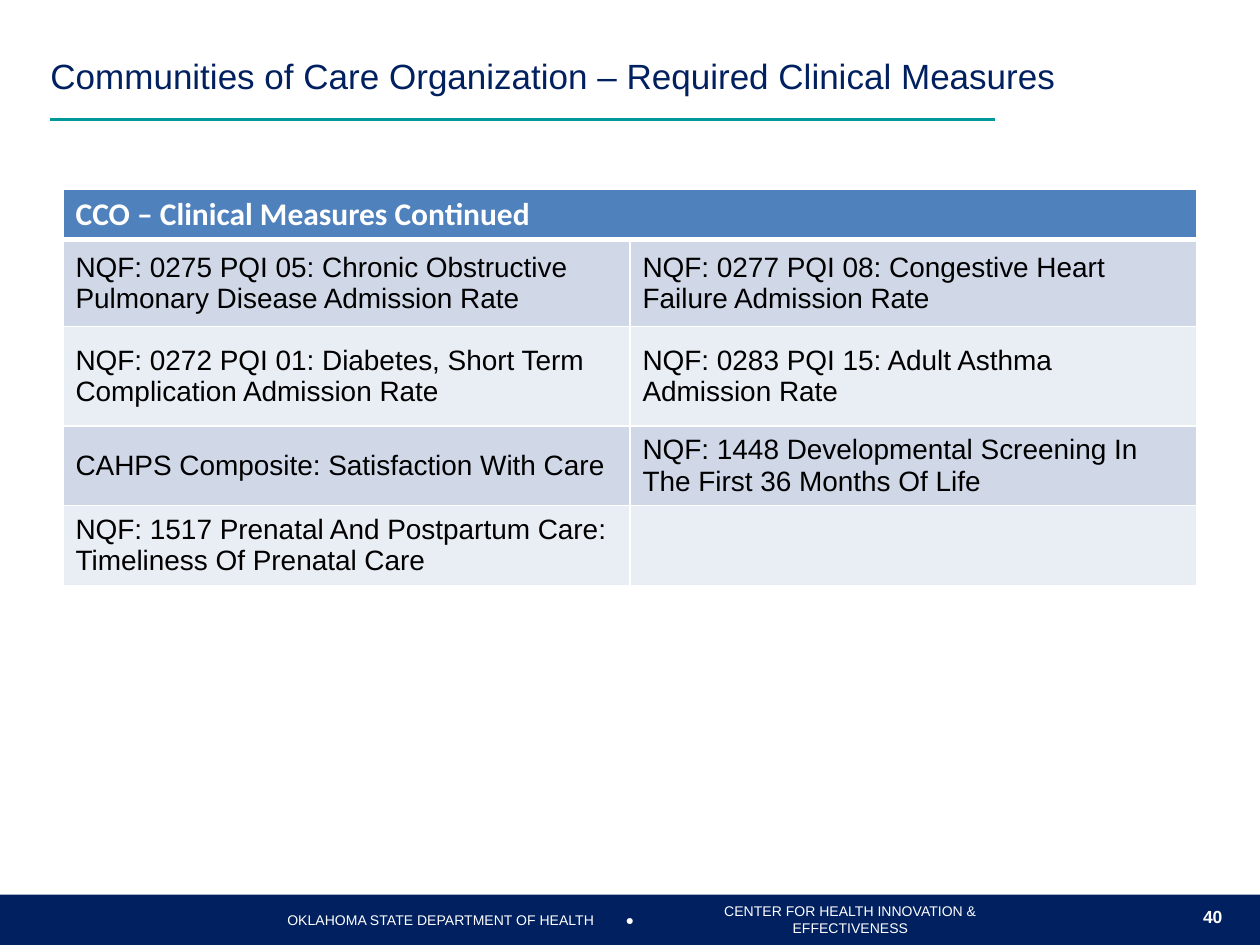
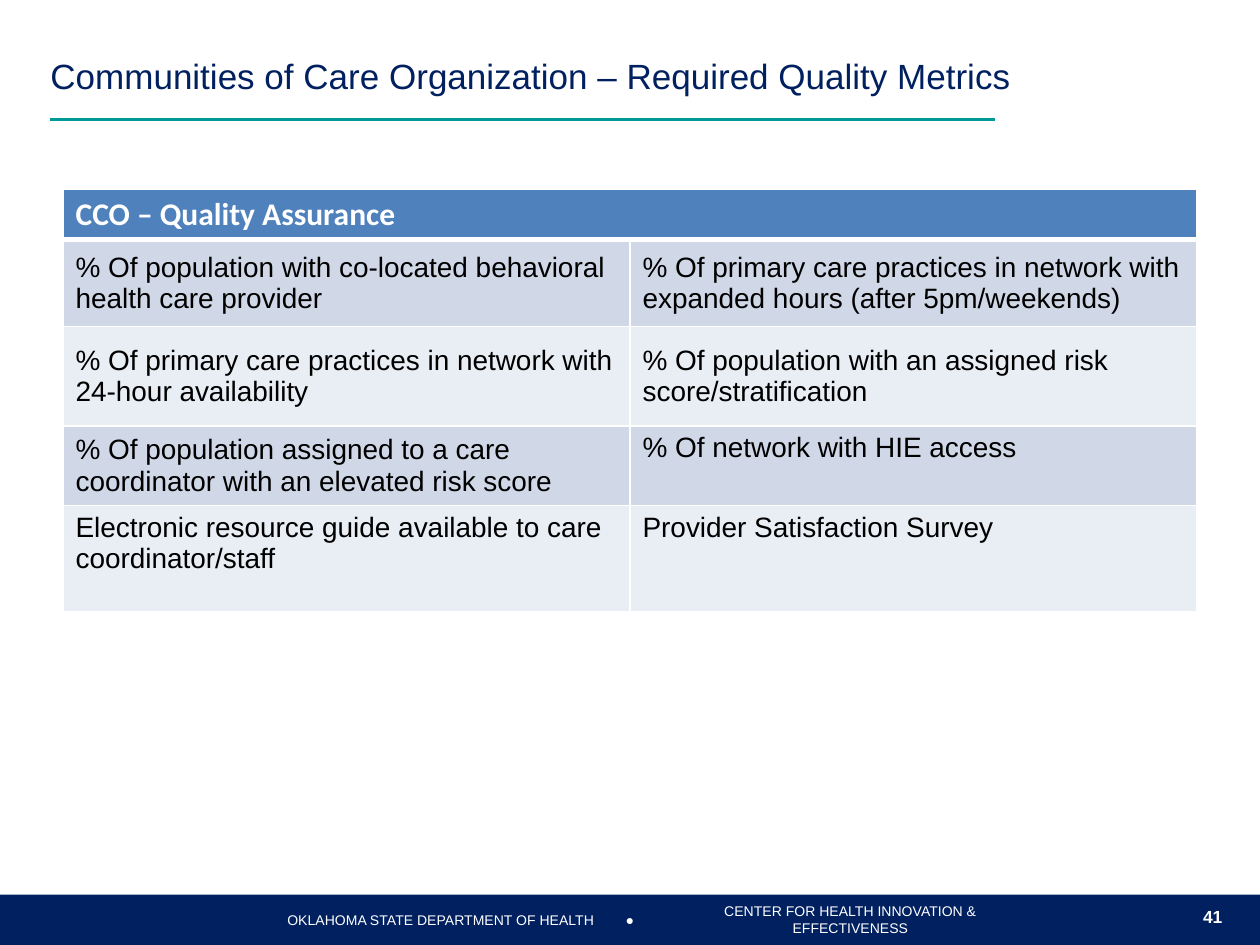
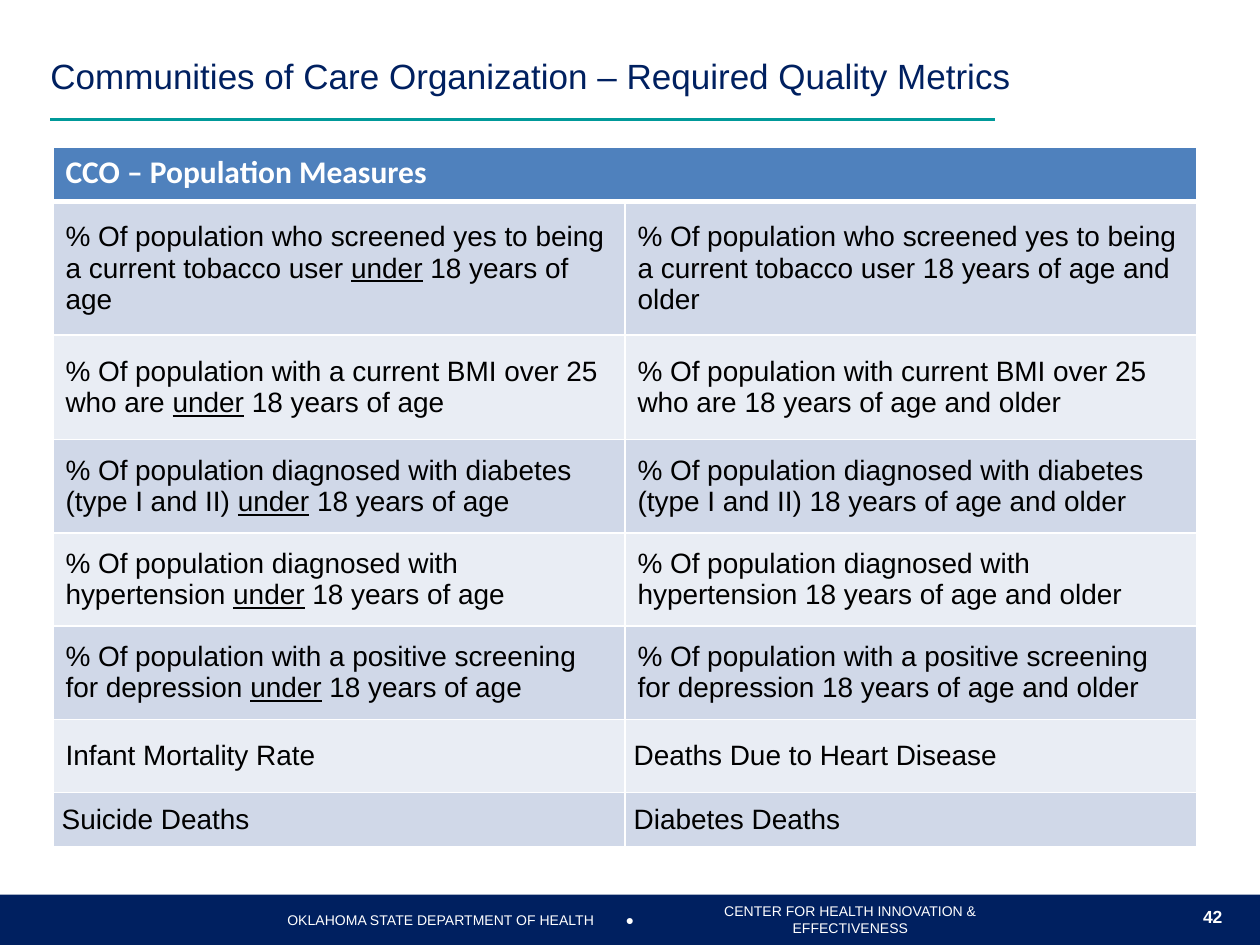
from dataclasses import dataclass

from lxml import etree
from pptx import Presentation
from pptx.dml.color import RGBColor
from pptx.enum.shapes import MSO_CONNECTOR, MSO_SHAPE
from pptx.enum.text import MSO_ANCHOR as Anchor, PP_ALIGN as Align
from pptx.oxml.ns import qn
from pptx.util import Inches, Pt

COLORS = {
    "navy": "002060",
    "teal": "009999",
    "header": "4F81BD",
    "band_dark": "D0D8E8",
    "band_light": "E9EDF4",
    "white": "FFFFFF",
    "black": "000000",
}
UNDERLINED = "under"


@dataclass(frozen=True)
class Label:
    text: str
    left: float
    top: float
    width: float
    height: float
    size: float = 8
    color: str = "white"
    bold: bool = False
    align: Align = Align.CENTER
    inset_x: float = 0
    inset_y: float = 0
    wrap: bool = False


@dataclass(frozen=True)
class Cell:
    text: str
    anchor: Anchor = Anchor.MIDDLE
    tight: bool = False


@dataclass(frozen=True)
class MeasureSlide:
    number: int
    title: str
    heading: str
    left: float
    top: float
    column_width: float
    row_heights: tuple[float, ...]
    rows: tuple[tuple[Cell, Cell], ...]


FOOTER_LABELS = (
    Label("OKLAHOMA STATE DEPARTMENT OF HEALTH", 2, 7.1, 3, 0.4, inset_x=0.05, inset_y=0.05),
    Label("CENTER FOR HEALTH INNOVATION & EFFECTIVENESS", 5.25, 7.1, 3, 0.4,
          inset_x=0.05, inset_y=0.05),
    Label("●", 4.75, 7.1, 0.5, 0.4),
)

SLIDES = (
    MeasureSlide(
        40, "Communities of Care Organization – Required Clinical Measures",
        "CCO – Clinical Measures Continued",
        0.5, 1.5, 4.5, (0.4, 0.69, 0.79, 0.59, 0.59),
        (
            (Cell("NQF: 0275 PQI 05: Chronic Obstructive Pulmonary Disease Admission Rate"),
             Cell("NQF: 0277 PQI 08: Congestive Heart Failure Admission Rate")),
            (Cell("NQF: 0272 PQI 01: Diabetes, Short Term Complication Admission Rate"),
             Cell("NQF: 0283 PQI 15: Adult Asthma Admission Rate")),
            (Cell("CAHPS Composite: Satisfaction With Care"),
             Cell("NQF: 1448 Developmental Screening In The First 36 Months Of Life")),
            (Cell("NQF: 1517 Prenatal And Postpartum Care: Timeliness Of Prenatal Care"),
             Cell("")),
        ),
    ),
    MeasureSlide(
        41, "Communities of Care Organization – Required Quality Metrics",
        "CCO – Quality Assurance",
        0.5, 1.5, 4.5, (0.4, 0.69, 0.79, 0.59, 0.84),
        (
            (Cell("% Of population with co-located behavioral health care provider"),
             Cell("% Of primary care practices in network with expanded hours "
                  "(after 5pm/weekends)")),
            (Cell("% Of primary care practices in network with 24-hour availability"),
             Cell("% Of population with an assigned risk score/stratification")),
            (Cell("% Of population assigned to a care coordinator with an elevated risk score"),
             Cell("% Of network with HIE access", Anchor.TOP)),
            (Cell("Electronic resource guide available to care coordinator/staff", Anchor.TOP),
             Cell("Provider Satisfaction Survey", Anchor.TOP)),
        ),
    ),
    MeasureSlide(
        42, "Communities of Care Organization – Required Quality Metrics",
        "CCO – Population Measures",
        0.42, 1.17, 4.54, (0.43, 1.06, 0.83, 0.74, 0.74, 0.74, 0.58, 0.43),
        (
            (Cell("% Of population who screened yes to being a current tobacco user "
                  "under 18 years of age"),
             Cell("% Of population who screened yes to being a current tobacco user "
                  "18 years of age and older")),
            (Cell("% Of population with a current BMI over 25 who are under 18 years of age"),
             Cell("% Of population with current BMI over 25 who are 18 years of age and older")),
            (Cell("% Of population diagnosed with diabetes (type I and II) "
                  "under 18 years of age"),
             Cell("% Of population diagnosed with diabetes (type I and II) "
                  "18 years of age and older")),
            (Cell("% Of population diagnosed with hypertension under 18 years of age"),
             Cell("% Of population diagnosed with hypertension 18 years of age and older")),
            (Cell("% Of population with a positive screening for depression "
                  "under 18 years of age"),
             Cell("% Of population with a positive screening for depression "
                  "18 years of age and older")),
            (Cell("Infant Mortality Rate"),
             Cell("Deaths Due to Heart Disease", tight=True)),
            (Cell("Suicide Deaths", tight=True), Cell("Diabetes Deaths", tight=True)),
        ),
    ),
)


def rgb(name: str) -> RGBColor:
    return RGBColor.from_string(COLORS[name])


def set_font(paragraph, size: float, color: str, bold: bool = False, name: str = "Arial") -> None:
    font = paragraph.font
    font.name, font.size, font.bold = name, Pt(size), bold
    font.color.rgb = rgb(color)


def add_label(slide, label: Label) -> None:
    box = slide.shapes.add_textbox(
        Inches(label.left), Inches(label.top), Inches(label.width), Inches(label.height))
    frame = box.text_frame
    frame.word_wrap = label.wrap
    frame.vertical_anchor = Anchor.MIDDLE
    frame.margin_left = frame.margin_right = Inches(label.inset_x)
    frame.margin_top = frame.margin_bottom = Inches(label.inset_y)
    paragraph = frame.paragraphs[0]
    paragraph.text = label.text
    paragraph.alignment = label.align
    set_font(paragraph, label.size, label.color, label.bold)


def add_frame(slide, title: str, number: int) -> None:
    # Rule under the title
    rule = slide.shapes.add_connector(
        MSO_CONNECTOR.STRAIGHT, Inches(0.4), Inches(0.95), Inches(7.9), Inches(0.95))
    rule.line.color.rgb = rgb("teal")
    rule.line.width = Pt(2)
    etree.SubElement(rule._element.spPr, qn("a:effectLst"))

    # Footer band
    band = slide.shapes.add_shape(
        MSO_SHAPE.RECTANGLE, Inches(0), Inches(7.1), Inches(10), Inches(0.4))
    band.shadow.inherit = False
    band.fill.solid()
    band.fill.fore_color.rgb = rgb("navy")
    band.line.fill.background()
    for label in FOOTER_LABELS:
        add_label(slide, label)

    # Title and slide number
    add_label(slide, Label(title, 0.4, 0.25, 9.2, 0.7, size=20, color="navy",
                           align=Align.LEFT, inset_y=0.05, wrap=True))
    add_label(slide, Label(str(number), 9.5, 7.15, 0.25, 0.25, size=10, bold=True))


def set_borders(cell, top: float, bottom: float) -> None:
    properties = cell._tc.get_or_add_tcPr()
    widths = {"lnL": 1, "lnR": 1, "lnT": top, "lnB": bottom}
    for index, (side, width) in enumerate(widths.items()):
        line = etree.Element(qn(f"a:{side}"), w=str(Pt(width)))
        fill = etree.SubElement(line, qn("a:solidFill"))
        etree.SubElement(fill, qn("a:srgbClr"), val=COLORS["white"])
        properties.insert(index, line)


def fill_cell(cell, content: Cell, color: str) -> None:
    cell.fill.solid()
    cell.fill.fore_color.rgb = rgb(color)
    cell.vertical_anchor = content.anchor
    if content.tight:
        cell.margin_left = cell.margin_right = Inches(0.07)
        cell.margin_top = cell.margin_bottom = 0
    paragraph = cell.text_frame.paragraphs[0]
    for text in content.text.partition(UNDERLINED):
        if text:
            run = paragraph.add_run()
            run.text = text
            if text == UNDERLINED:
                run.font.underline = True


def add_measures(slide, measures: MeasureSlide) -> None:
    table = slide.shapes.add_table(
        len(measures.row_heights), 2, Inches(measures.left), Inches(measures.top),
        Inches(2 * measures.column_width), Inches(sum(measures.row_heights))).table
    for column in table.columns:
        column.width = Inches(measures.column_width)
    for row, height in zip(table.rows, measures.row_heights):
        row.height = Inches(height)

    # Heading across both columns
    heading = table.cell(0, 0)
    heading.merge(table.cell(0, 1))
    fill_cell(heading, Cell(measures.heading, Anchor.TOP), "header")
    set_font(heading.text_frame.paragraphs[0], 18, "white", bold=True, name="Calibri")
    for column in range(2):
        set_borders(table.cell(0, column), 1, 3)

    # Banded measures
    for row, contents in enumerate(measures.rows, start=1):
        color = "band_dark" if row % 2 else "band_light"
        for column, content in enumerate(contents):
            cell = table.cell(row, column)
            fill_cell(cell, content, color)
            set_font(cell.text_frame.paragraphs[0], 16, "black")
            set_borders(cell, 3 if row == 1 else 1, 1)


def main() -> None:
    presentation = Presentation()
    presentation.slide_width, presentation.slide_height = Inches(10), Inches(7.5)
    for measures in SLIDES:
        slide = presentation.slides.add_slide(presentation.slide_layouts[6])
        add_frame(slide, measures.title, measures.number)
        add_measures(slide, measures)
    presentation.save("out.pptx")


if __name__ == "__main__":
    main()
